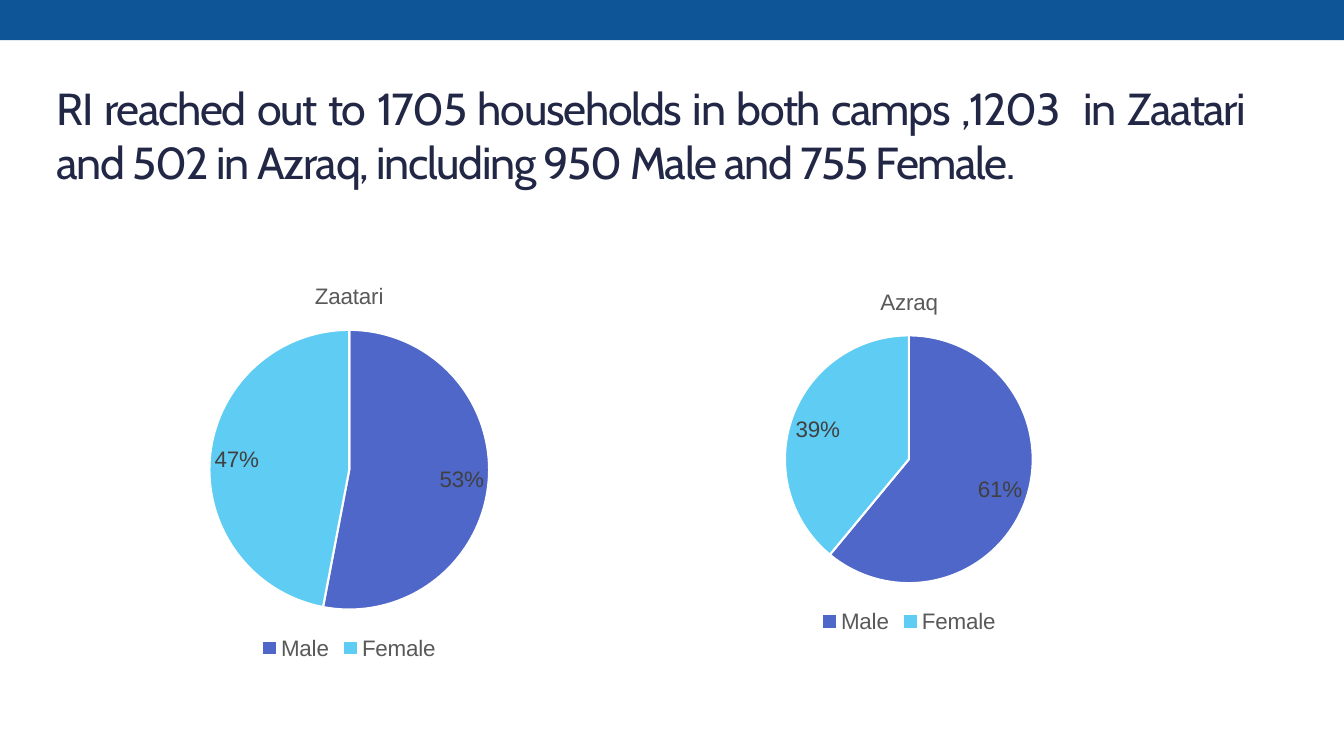
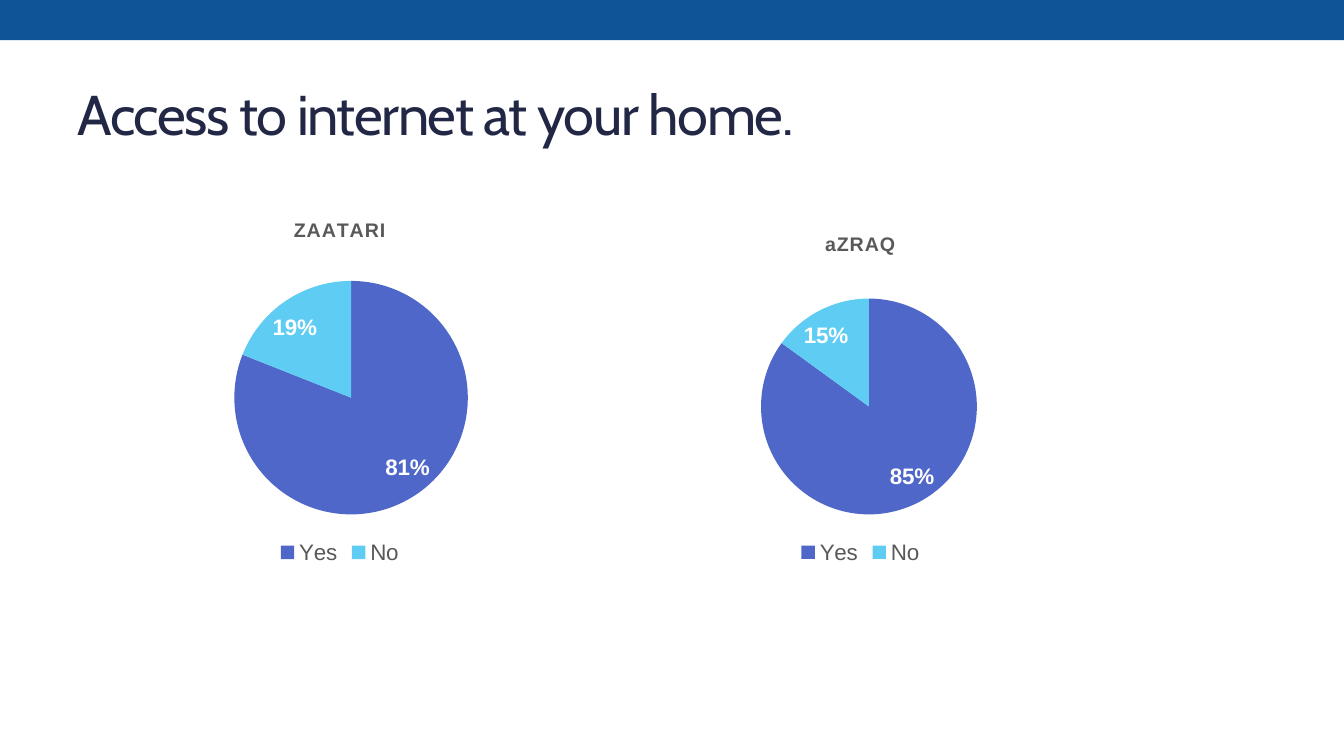
from dataclasses import dataclass

from lxml import etree
from pptx import Presentation
from pptx import util as u
from pptx.chart import data as chart_data
from pptx.dml.color import RGBColor
from pptx.enum import chart as charts, shapes, text

COLUMNS, ROWS = 160, 90
CELL = u.Inches(1 / 12)
SHARE_FORMAT = "0%"


@dataclass(frozen=True)
class Theme:
    band: str = "0D5596"
    title: str = "212745"
    caption: str = "595959"
    label: str = "404040"
    white: str = "FFFFFF"
    chart_text: str = "000000"
    slices: tuple[str, ...] = ("4E67C8", "5ECCF3")
    title_font: str = "Cabin"
    chart_font: str = "Arial"
    chart_size: int = 10
    legend_size: int = 16
    title_tracking: int = -100
    caption_tracking: int = 50


@dataclass(frozen=True)
class Frame:
    column: float
    row: float
    columns: float
    rows: float


@dataclass(frozen=True)
class Pie:
    name: str
    shares: tuple[float, float]
    frame: Frame
    centre: tuple[float, float]
    radius: float


@dataclass(frozen=True)
class PieStyle:
    caption_size: int
    label_color: str
    bold: bool
    outlined: bool


@dataclass(frozen=True)
class Page:
    title: str
    title_size: int
    align: text.PP_ALIGN
    frame: Frame
    categories: tuple[str, str]
    style: PieStyle
    pies: tuple[Pie, ...]


THEME = Theme()
BAND = Frame(0, 0, COLUMNS, 4.8)

PAGES = (
    Page(
        "RI reached out to 1705 households in both camps ,1203  in Zaatari "
        "and 502 in Azraq, including 950 Male and 755 Female.",
        32, text.PP_ALIGN.JUSTIFY, Frame(5.52, 7.56, 144, 16.92),
        ("Male", "Female"),
        PieStyle(16, THEME.label, bold=False, outlined=True),
        (
            Pie("Zaatari", (0.53, 0.47), Frame(16.38, 31.5, 50.4, 47.64),
                (41.58, 55.92), 16.65),
            Pie("Azraq", (0.61, 0.39), Frame(79.2, 32.28, 58.08, 43.68),
                (108.2, 54.68), 14.75),
        ),
    ),
    Page(
        "Access to internet at your home.",
        40, text.PP_ALIGN.LEFT, Frame(8.04, 6.96, 144, 12.96),
        ("Yes", "No"),
        PieStyle(14, THEME.white, bold=True, outlined=False),
        (
            Pie("ZAATARI", (0.81, 0.19), Frame(11.04, 23.95, 58.8, 43.8),
                (41.8, 47.35), 13.9),
            Pie("aZRAQ", (0.85, 0.15), Frame(70.68, 25.6, 63.48, 42.12),
                (103.45, 48.4), 12.85),
        ),
    ),
)


def cells(count: float) -> int:
    return round(count * CELL)


def bounds(frame: Frame) -> tuple[int, int, int, int]:
    return (cells(frame.column), cells(frame.row),
            cells(frame.columns), cells(frame.rows))


def style_font(font, name: str, size: int, color: str, bold: bool = False) -> None:
    font.name = name
    font.size = u.Pt(size)
    font.bold = bold
    font.color.rgb = RGBColor.from_string(color)


def add_band(slide) -> None:
    band = slide.shapes.add_shape(shapes.MSO_SHAPE.RECTANGLE, *bounds(BAND))
    band.shadow.inherit = False
    band.fill.solid()
    band.fill.fore_color.rgb = RGBColor.from_string(THEME.band)
    band.line.fill.background()


def write_title(slide, page: Page) -> None:
    box = slide.shapes.title
    box.left, box.top, box.width, box.height = bounds(page.frame)
    frame = box.text_frame
    frame.word_wrap = True
    frame.auto_size = text.MSO_AUTO_SIZE.NONE
    frame.vertical_anchor = text.MSO_ANCHOR.MIDDLE
    para = frame.paragraphs[0]
    para.alignment = page.align
    span = para.add_run()
    span.text = page.title
    style_font(span.font, THEME.title_font, page.title_size, THEME.title)
    span._r.get_or_add_rPr().set("spc", str(THEME.title_tracking))


def place_plot(chart, pie: Pie) -> None:
    plot_area = chart._chartSpace.chart.plotArea
    namespace = etree.QName(plot_area).namespace
    for old in plot_area.findall(f"{{{namespace}}}layout"):
        plot_area.remove(old)
    layout = plot_area.makeelement(f"{{{namespace}}}layout")
    plot_area.insert(0, layout)
    manual = etree.SubElement(layout, f"{{{namespace}}}manualLayout")
    frame = pie.frame
    left, top = (middle - pie.radius for middle in pie.centre)
    settings = {
        "layoutTarget": "inner",
        "xMode": "edge",
        "yMode": "edge",
        "x": (left - frame.column) / frame.columns,
        "y": (top - frame.row) / frame.rows,
        "w": 2 * pie.radius / frame.columns,
        "h": 2 * pie.radius / frame.rows,
    }
    for tag, value in settings.items():
        etree.SubElement(manual, f"{{{namespace}}}{tag}").set("val", str(value))


def write_caption(chart, name: str, style: PieStyle) -> None:
    chart.has_title = True
    chart.chart_title.include_in_layout = False
    span = chart.chart_title.text_frame.paragraphs[0].add_run()
    span.text = name
    style_font(span.font, THEME.chart_font, style.caption_size,
               THEME.caption, style.bold)
    if style.bold:
        span._r.get_or_add_rPr().set("spc", str(THEME.caption_tracking))


def paint_slices(plot, style: PieStyle) -> None:
    for index, color in enumerate(THEME.slices):
        wedge = plot.series[0].points[index].format
        wedge.fill.solid()
        wedge.fill.fore_color.rgb = RGBColor.from_string(color)
        if style.outlined:
            wedge.line.color.rgb = RGBColor.from_string(THEME.white)
            wedge.line.width = u.Pt(1.5)
        else:
            wedge.line.fill.background()


def add_pie(slide, pie: Pie, categories: tuple[str, str], style: PieStyle) -> None:
    source = chart_data.CategoryChartData(number_format=SHARE_FORMAT)
    source.categories = categories
    source.add_series("Series 1", pie.shares)
    chart = slide.shapes.add_chart(
        charts.XL_CHART_TYPE.PIE, *bounds(pie.frame), source).chart
    style_font(chart.font, THEME.chart_font, THEME.chart_size, THEME.chart_text)
    write_caption(chart, pie.name, style)
    chart.has_legend = True
    chart.legend.position = charts.XL_LEGEND_POSITION.BOTTOM
    chart.legend.include_in_layout = False
    style_font(chart.legend.font, THEME.chart_font,
               THEME.legend_size, THEME.caption)
    plot = chart.plots[0]
    plot.vary_by_categories = True
    paint_slices(plot, style)
    labels = plot.series[0].data_labels
    labels.show_value = True
    labels.number_format = SHARE_FORMAT
    labels.number_format_is_linked = False
    labels.position = charts.XL_LABEL_POSITION.BEST_FIT
    style_font(labels.font, THEME.chart_font, THEME.legend_size,
               style.label_color, style.bold)
    place_plot(chart, pie)


def main() -> None:
    deck = Presentation()
    deck.slide_width, deck.slide_height = cells(COLUMNS), cells(ROWS)
    title_only = deck.slide_layouts.get_by_name("Title Only")
    for page in PAGES:
        slide = deck.slides.add_slide(title_only)
        add_band(slide)
        write_title(slide, page)
        for pie in page.pies:
            add_pie(slide, pie, page.categories, page.style)
    deck.save("out.pptx")


if __name__ == "__main__":
    main()
